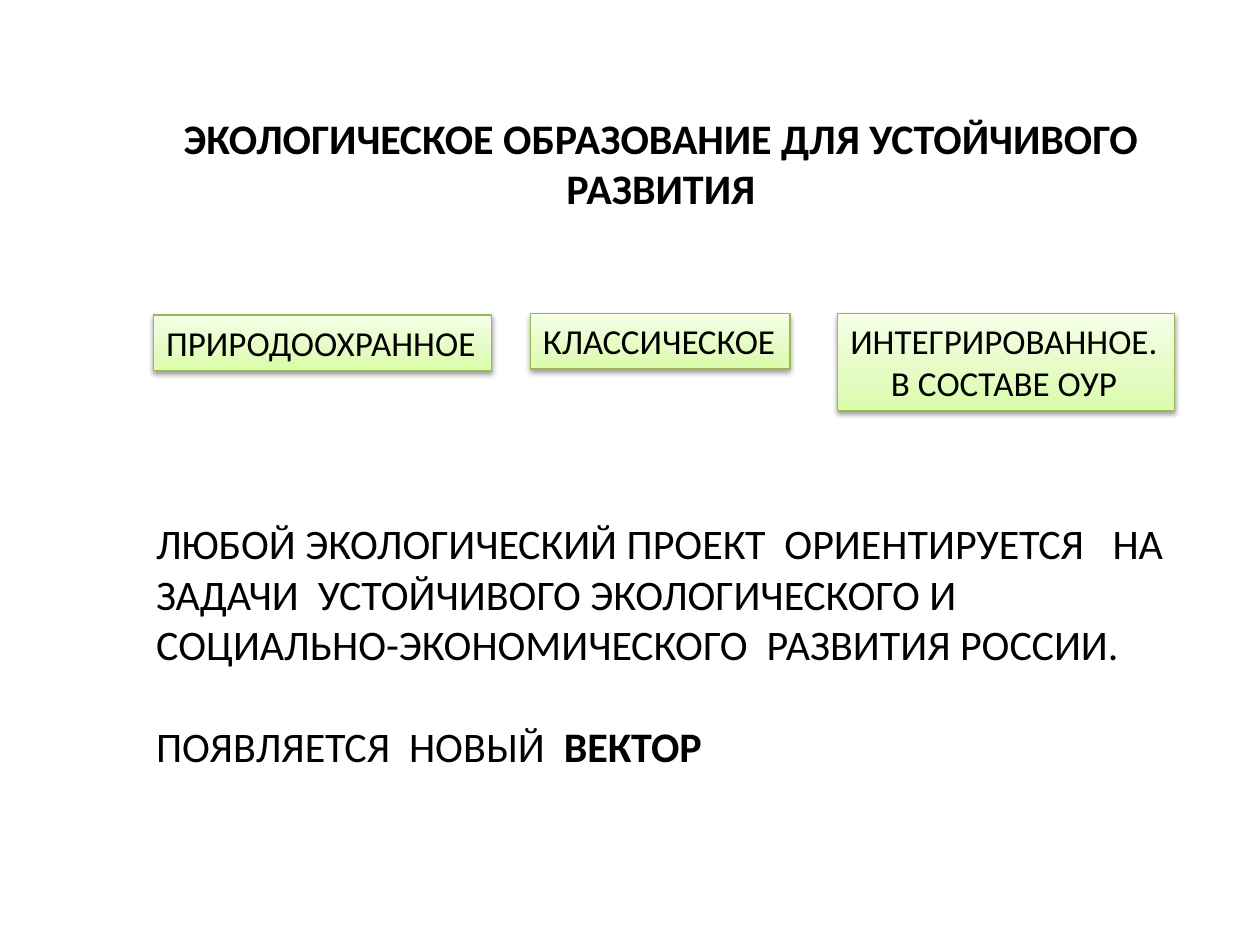
from copy import deepcopy
from dataclasses import dataclass

from lxml import etree
from pptx import Presentation, util as u
from pptx.dml.color import RGBColor
from pptx.enum import shapes, text
from pptx.oxml.ns import qn

COLORS = {"text": "000000", "line": "98B955", "shadow": "000000",
          "bottom": "DAFDA7", "middle": "E4FCC2", "top": "F5FFE7"}
STOPS = ((0, "bottom"), (0.35, "middle"), (1, "top"))
FONT = "Calibri"


@dataclass
class Run:
    text: str
    bold: bool = False


@dataclass
class Para:
    runs: list[Run]
    align: text.PP_ALIGN = text.PP_ALIGN.LEFT
    before: float = 0


@dataclass
class Block:
    left: float
    top: float
    width: float
    height: float
    size: int
    paras: list[Para]

    def box(self) -> tuple:
        return tuple(u.Inches(v) for v in (self.left, self.top, self.width, self.height))


CENTER = text.PP_ALIGN.CENTER
TITLE = Block(1.32, 0.84, 7.85, 0.91, 24, [
    Para([Run("ЭКОЛОГИЧЕСКОЕ ОБРАЗОВАНИЕ ДЛЯ УСТОЙЧИВОГО", True)], CENTER),
    Para([Run("РАЗВИТИЯ", True)], CENTER),
])
APPROACHES = [
    Block(1.22, 2.5, 2.68, 0.44, 20, [Para([Run("ПРИРОДООХРАННОЕ")])]),
    Block(4.21, 2.49, 2.06, 0.44, 20, [Para([Run("КЛАССИЧЕСКОЕ")])]),
    Block(6.65, 2.49, 2.67, 0.77, 20, [
        Para([Run("ИНТЕГРИРОВАННОЕ.")]),
        Para([Run("В СОСТАВЕ ОУР")], CENTER),
    ]),
]
CONCLUSION = Block(1.14, 4.06, 8.34, 2.12, 24, [
    Para([Run("ЛЮБОЙ ЭКОЛОГИЧЕСКИЙ ПРОЕКТ  ОРИЕНТИРУЕТСЯ   НА")]),
    Para([Run("ЗАДАЧИ  УСТОЙЧИВОГО ЭКОЛОГИЧЕСКОГО И")]),
    Para([Run("СОЦИАЛЬНО-ЭКОНОМИЧЕСКОГО  РАЗВИТИЯ РОССИИ.")]),
    Para([Run("ПОЯВЛЯЕТСЯ  НОВЫЙ  "), Run("ВЕКТОР", True)], before=29.3),
])


def rgb(name: str) -> RGBColor:
    """Return a named colour."""
    return RGBColor.from_string(COLORS[name])


def write(sp, block: Block) -> None:
    """Fill a shape with the paragraphs of a block."""
    tf = sp.text_frame
    tf.word_wrap = False
    tf.auto_size = text.MSO_AUTO_SIZE.SHAPE_TO_FIT_TEXT
    tf.vertical_anchor = text.MSO_ANCHOR.TOP
    for i, para in enumerate(block.paras):
        p = tf.add_paragraph() if i else tf.paragraphs[0]
        p.alignment = para.align
        p.space_before = u.Pt(para.before)
        for run in para.runs:
            r = p.add_run()
            r.text = run.text
            r.font.name = FONT
            r.font.size = u.Pt(block.size)
            r.font.bold = run.bold
            r.font.color.rgb = rgb("text")


def add_text(s, block: Block) -> None:
    """Draw a plain text block."""
    write(s.shapes.add_textbox(*block.box()), block)


def add_gradient(sp) -> None:
    """Apply the three-stop vertical gradient."""
    sp.fill.gradient()
    sp.fill.gradient_angle = 90
    stops = sp.element.spPr.find(".//" + qn("a:gsLst"))
    stops.append(deepcopy(stops[-1]))
    for stop, (position, name) in zip(sp.fill.gradient_stops, STOPS):
        stop.position = position
        stop.color.rgb = rgb(name)


def add_shadow(sp) -> None:
    """Apply a soft shadow below the shape."""
    sp.shadow.inherit = False
    effects = sp.element.spPr.find(qn("a:effectLst"))
    shadow = etree.SubElement(effects, qn("a:outerShdw"), blurRad=str(u.Pt(3.1)),
                              dist=str(u.Pt(1.6)), dir="5400000", rotWithShape="0")
    color = etree.SubElement(shadow, qn("a:srgbClr"), val=COLORS["shadow"])
    etree.SubElement(color, qn("a:alpha"), val="38000")


def add_approach(s, block: Block) -> None:
    """Draw a green box naming an approach."""
    sp = s.shapes.add_shape(shapes.MSO_SHAPE.RECTANGLE, *block.box())
    add_gradient(sp)
    sp.line.color.rgb = rgb("line")
    sp.line.width = u.Pt(0.75)
    add_shadow(sp)
    write(sp, block)


def main() -> None:
    """Build and save the slide."""
    prs = Presentation()
    prs.slide_width, prs.slide_height = u.Inches(10), u.Inches(7.5)
    s = prs.slides.add_slide(prs.slide_layouts[6])
    add_text(s, TITLE)
    for block in APPROACHES:
        add_approach(s, block)
    add_text(s, CONCLUSION)
    prs.save("out.pptx")


if __name__ == "__main__":
    main()
